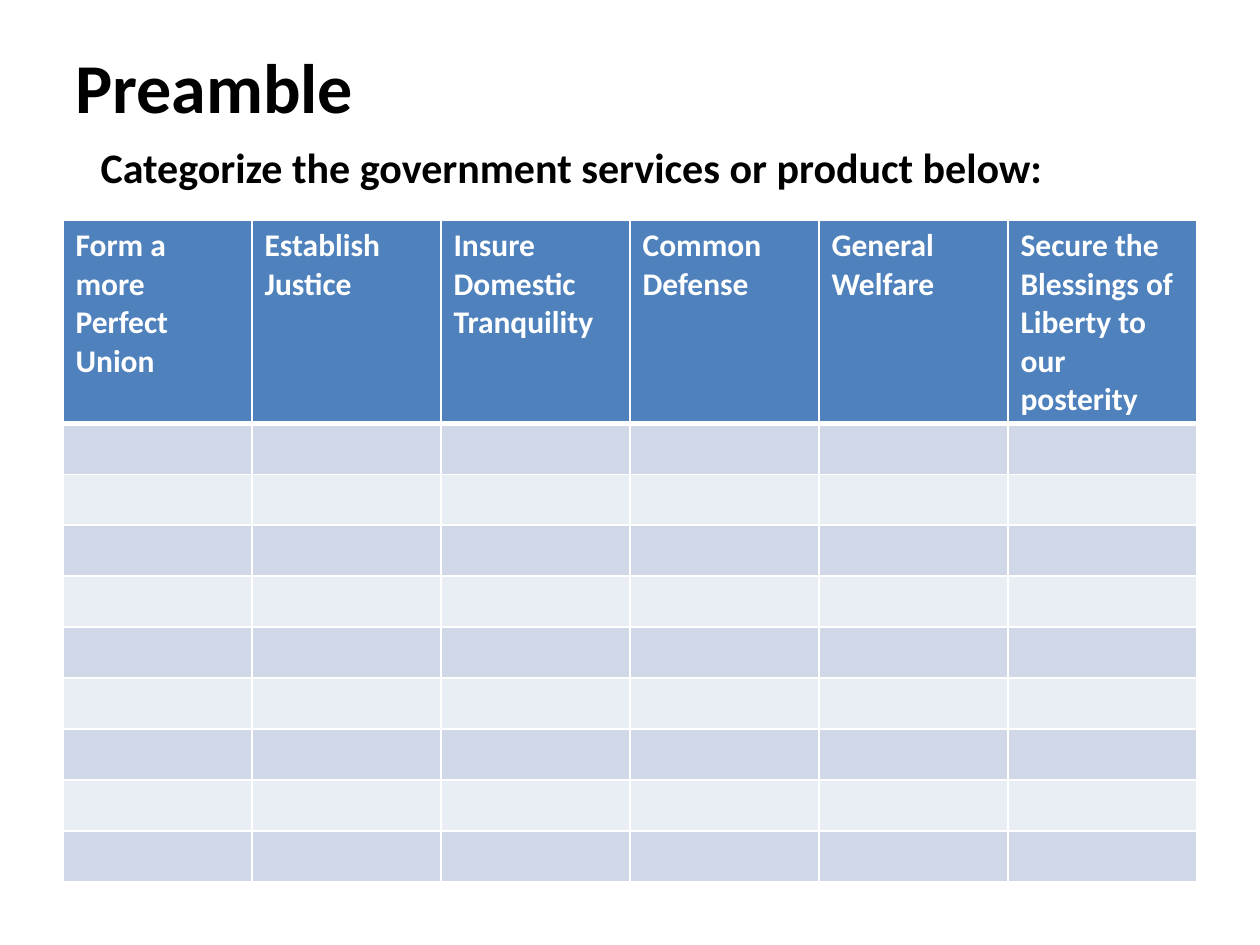
from lxml.etree import SubElement
from pptx import Presentation
from pptx.dml.color import RGBColor
from pptx.enum.text import MSO_ANCHOR
from pptx.oxml.ns import qn
from pptx.util import Pt

EMU_PER_PX = 9144
COLORS = {
    "text": "000000",
    "header": "4F81BD",
    "odd": "D0D8E8",
    "even": "E9EDF4",
    "white": "FFFFFF",
}
GOALS = [
    "Form a more Perfect Union",
    "Establish Justice",
    "Insure Domestic Tranquility",
    "Common Defense",
    "General Welfare",
    "Secure the Blessings of Liberty to our posterity",
]
BODY_ROWS = 9
HEADER_HEIGHT = 161


def px(length):
    """Turn a length in px into EMU."""
    return round(length * EMU_PER_PX)


def color(name):
    """Look up a named colour."""
    return RGBColor.from_string(COLORS[name])


def format_font(font, size, color_name):
    """Set the shared bold text style."""
    values = {"name": "Calibri", "size": Pt(size), "bold": True}
    for attribute, value in values.items():
        setattr(font, attribute, value)
    font.color.rgb = color(color_name)


def set_borders(cell, widths):
    """Draw white cell borders with the given widths in points."""
    properties = cell._tc.get_or_add_tcPr()
    for index, (side, width) in enumerate(widths.items()):
        line = properties.makeelement(qn(f"a:ln{side}"), {"w": str(Pt(width))})
        fill = SubElement(line, qn("a:solidFill"))
        SubElement(fill, qn("a:srgbClr"), val=COLORS["white"])
        properties.insert(index, line)


def add_heading(slide, left, top, width, height):
    """Place the title and the indented instruction under it."""
    shape = slide.shapes.add_textbox(px(left), px(top), px(width), px(height))
    frame = shape.text_frame
    frame.word_wrap = True
    frame.vertical_anchor = MSO_ANCHOR.TOP
    title = frame.paragraphs[0]
    title.text = "Preamble"
    format_font(title.font, 40, "text")
    instruction = frame.add_paragraph()
    instruction.text = "Categorize the government services or product below:"
    instruction.space_before = Pt(8)
    instruction._p.get_or_add_pPr().set("marL", str(px(20)))
    format_font(instruction.font, 24, "text")


def add_goal_table(slide, left, top, width, height):
    """Place the table with one column for each goal and banded empty rows."""
    table = slide.shapes.add_table(
        BODY_ROWS + 1, len(GOALS), px(left), px(top), px(width), px(height)
    ).table
    body_height = (height - HEADER_HEIGHT) / BODY_ROWS
    for row_index, row in enumerate(table.rows):
        is_header = row_index == 0
        row.height = px(HEADER_HEIGHT if is_header else body_height)
        band = "header" if is_header else "odd" if row_index % 2 else "even"
        widths = {
            "L": 1,
            "R": 1,
            "T": 3 if row_index == 1 else 1,
            "B": 3 if is_header else 1,
        }
        for cell, goal in zip(row.cells, GOALS):
            cell.fill.solid()
            cell.fill.fore_color.rgb = color(band)
            set_borders(cell, widths)
            if is_header:
                cell.text = goal
                format_font(cell.text_frame.paragraphs[0].runs[0].font, 18, "white")


def main():
    """Build and save the slide."""
    presentation = Presentation()
    presentation.slide_width = px(1000)
    presentation.slide_height = px(750)
    slide = presentation.slides.add_slide(presentation.slide_layouts[6])
    add_heading(slide, 50, 30, 900, 125)
    add_goal_table(slide, 50, 175, 900, 525)
    presentation.save("out.pptx")


if __name__ == "__main__":
    main()
